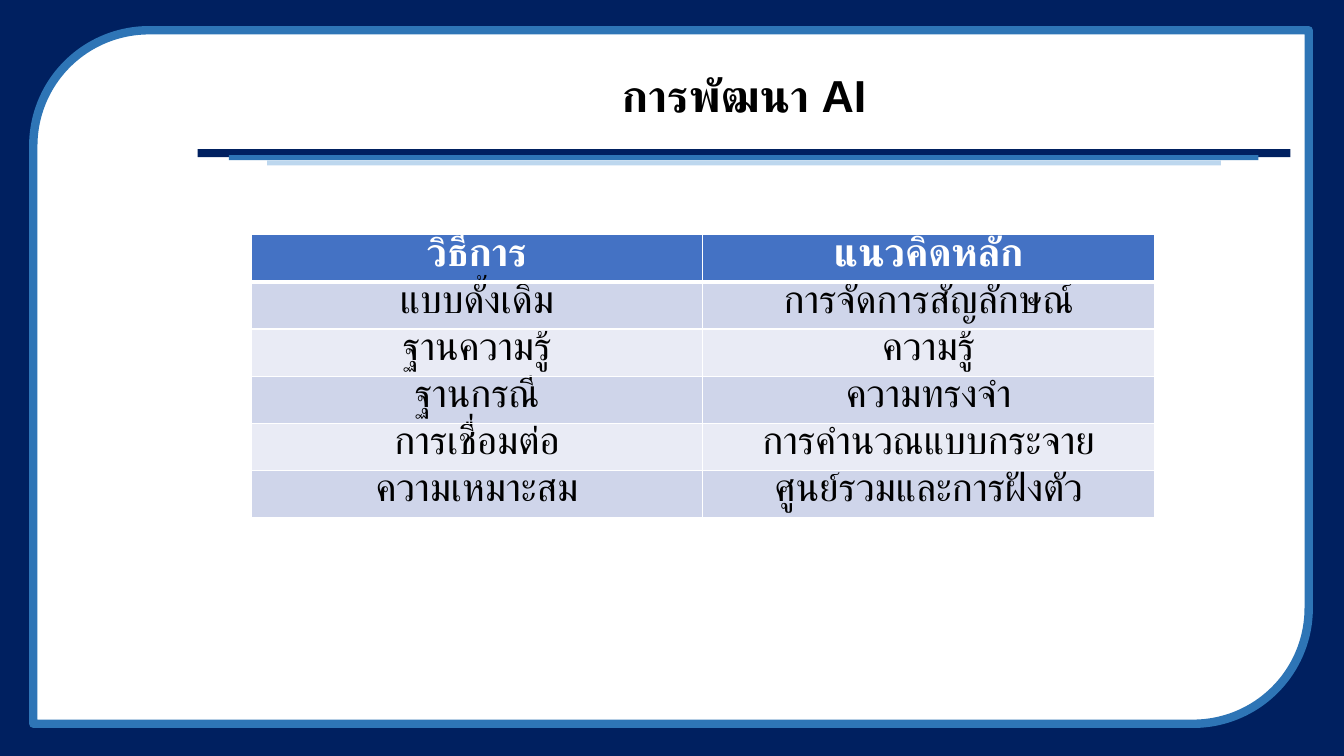
from lxml.etree import SubElement
from pptx import Presentation
from pptx.dml.color import RGBColor
from pptx.enum.shapes import MSO_SHAPE
from pptx.enum.text import MSO_ANCHOR, PP_ALIGN
from pptx.oxml.ns import qn
from pptx.util import Inches, Pt

NAVY = RGBColor(0x00, 0x20, 0x60)
BLUE = RGBColor(0x2E, 0x75, 0xB6)
PALE_BLUE = RGBColor(0xBD, 0xD7, 0xEE)
HEADER = RGBColor(0x44, 0x72, 0xC4)
BAND_DARK = RGBColor(0xCF, 0xD5, 0xEA)
BAND_LIGHT = RGBColor(0xE9, 0xEB, 0xF5)
WHITE = RGBColor(0xFF, 0xFF, 0xFF)
BLACK = RGBColor(0x00, 0x00, 0x00)

ROWS = [
    ("วิธีการ", "แนวคิดหลัก"),
    ("แบบดั้งเดิม", "การจัดการสัญลักษณ์"),
    ("ฐานความรู้", "ความรู้"),
    ("ฐานกรณี", "ความทรงจำ"),
    ("การเชื่อมต่อ", "การคำนวณแบบกระจาย"),
    ("ความเหมาะสม", "ศูนย์รวมและการฝังตัว"),
]


def add_block(s, kind, left, top, width, height, fill, line=None):
    sp = s.shapes.add_shape(kind, Inches(left), Inches(top), Inches(width), Inches(height))
    sp.shadow.inherit = False
    sp.fill.solid()
    sp.fill.fore_color.rgb = fill
    if line is None:
        sp.line.fill.background()
    else:
        sp.line.color.rgb = line
        sp.line.width = Pt(6)
    return sp


def write(tf, text, font, size, color, bold):
    tf.text = text
    p = tf.paragraphs[0]
    p.alignment = PP_ALIGN.CENTER
    r = p.runs[0]
    r.font.name = font
    r.font.size = Pt(size)
    r.font.bold = bold
    r.font.color.rgb = color
    return p


def add_title(s, text):
    sp = s.shapes.add_textbox(Inches(1.96), Inches(0.49), Inches(10.84), Inches(0.97))
    tf = sp.text_frame
    tf.word_wrap = True
    tf.vertical_anchor = MSO_ANCHOR.MIDDLE
    p = write(tf, text, "Arial", 32, BLACK, True)
    p.line_spacing = 0.9


def set_borders(cell, row):
    tc_pr = cell._tc.get_or_add_tcPr()
    widths = {"L": 1, "R": 1, "T": 3 if row == 1 else 1, "B": 3 if row == 0 else 1}
    for side, width in widths.items():
        ln = SubElement(tc_pr, qn(f"a:ln{side}"), w=str(Pt(width)))
        fill = SubElement(ln, qn("a:solidFill"))
        SubElement(fill, qn("a:srgbClr"), val=str(WHITE))


def add_methods_table(s):
    frame = s.shapes.add_table(len(ROWS), 2, Inches(2.49), Inches(2.33), Inches(8.96), Inches(2.46))
    table = frame.table
    for i, texts in enumerate(ROWS):
        header = i == 0
        fill = HEADER if header else (BAND_LIGHT, BAND_DARK)[i % 2]
        for j, text in enumerate(texts):
            cell = table.cell(i, j)
            cell.margin_top = cell.margin_bottom = 0
            write(cell.text_frame, text, "Calibri", 28, WHITE if header else BLACK, header)
            set_borders(cell, i)
            cell.fill.solid()
            cell.fill.fore_color.rgb = fill


def main():
    prs = Presentation()
    prs.slide_width = Inches(13.33)
    prs.slide_height = Inches(7.5)
    s = prs.slides.add_slide(prs.slide_layouts[6])
    add_block(s, MSO_SHAPE.RECTANGLE, 0, 0, 13.33, 7.5, NAVY)
    panel = add_block(s, MSO_SHAPE.ROUND_2_DIAG_RECTANGLE, 0.33, 0.3, 12.65, 6.88, WHITE, BLUE)
    panel.rotation = 180
    for left, top, width, height, color in [
        (1.96, 1.48, 10.84, 0.08, NAVY),
        (2.27, 1.54, 10.21, 0.05, BLUE),
        (2.65, 1.59, 9.46, 0.05, PALE_BLUE),
    ]:
        add_block(s, MSO_SHAPE.RECTANGLE, left, top, width, height, color)
    add_title(s, "การพัฒนา AI")
    add_methods_table(s)
    prs.save("out.pptx")


if __name__ == "__main__":
    main()
